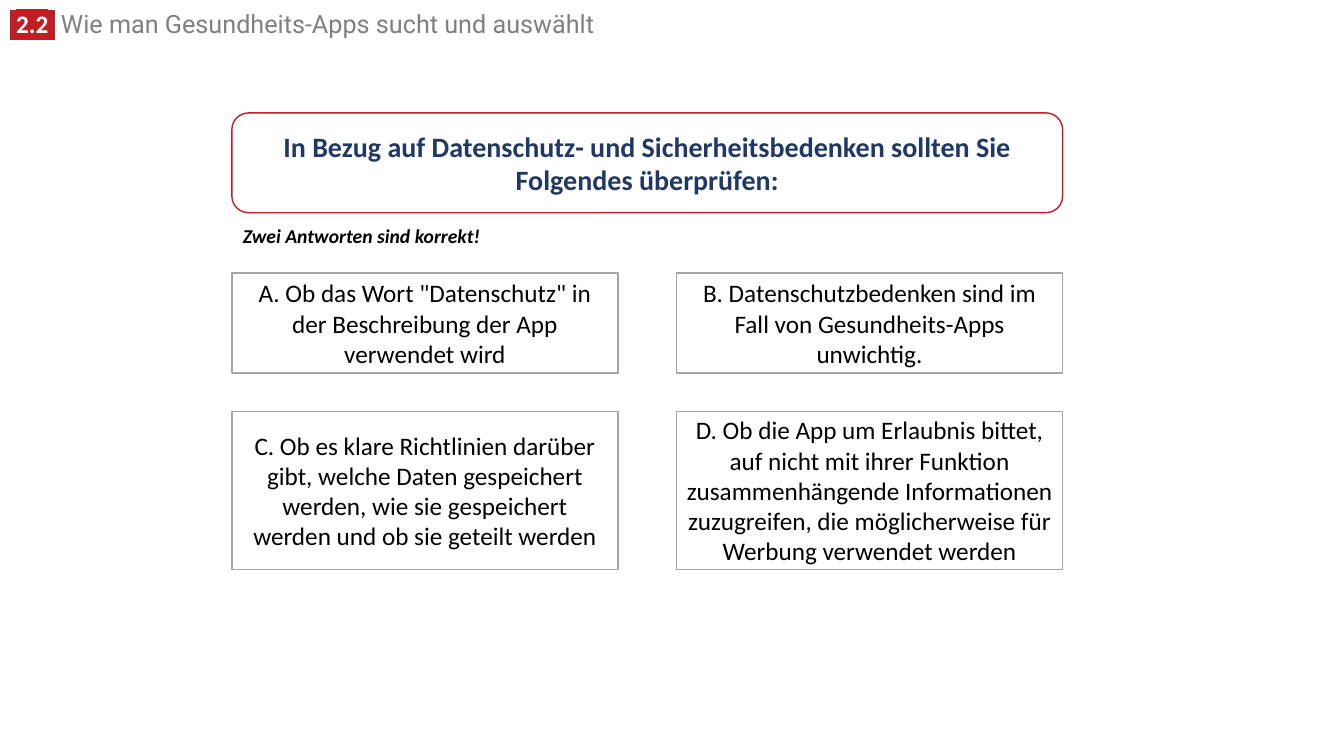
from lxml import etree
from pptx import Presentation
from pptx.dml.color import RGBColor
from pptx.enum.shapes import MSO_SHAPE as Shape
from pptx.enum.text import MSO_ANCHOR as Anchor, PP_ALIGN as Align
from pptx.oxml.ns import qn
from pptx.util import Inches, Pt

COLORS = {
    "red": "C01E24",
    "navy": "203864",
    "grey": "808080",
    "border": "A5A5A5",
    "white": "FFFFFF",
    "black": "000000",
}


def style_font(font, size, color, name="Calibri", bold=False):
    font.size = Pt(size)
    font.name = name
    font.bold = bold
    font.color.rgb = RGBColor.from_string(COLORS[color])


def add_card(kind, left, top, width, height, text, border):
    card = page.shapes.add_shape(
        kind, Inches(left), Inches(top), Inches(width), Inches(height))
    card.shadow.inherit = False
    card.fill.solid()
    card.fill.fore_color.rgb = RGBColor.from_string(COLORS["white"])
    card.line.color.rgb = RGBColor.from_string(COLORS[border])
    card.line.width = Pt(1)
    frame = card.text_frame
    frame.word_wrap = True
    frame.vertical_anchor = Anchor.MIDDLE
    frame.text = text
    para = frame.paragraphs[0]
    para.alignment = Align.CENTER
    return para.runs[0].font


deck = Presentation()
deck.slide_width, deck.slide_height = Inches(13.33), Inches(7.5)
page = deck.slides.add_slide(deck.slide_layouts[6])

# Section heading with highlighted number
heading = page.shapes.add_textbox(Inches(0), Inches(0.09), Inches(9.52), Inches(0.35))
heading.text_frame.word_wrap = True
para = heading.text_frame.paragraphs[0]
para.line_spacing = 0.8
for text, name in [(" ", "Roboto"), ("2.2", "Calibri"), (" ", "Roboto")]:
    span = para.add_run()
    span.text = text
    style_font(span.font, 18, "white", name, bold=True)
    highlight = etree.Element(qn("a:highlight"))
    etree.SubElement(highlight, qn("a:srgbClr"), val=COLORS["red"])
    span.font._element.find(qn("a:solidFill")).addnext(highlight)
span = para.add_run()
span.text = " Wie man Gesundheits-Apps sucht und auswählt"
style_font(span.font, 18, "grey", "Roboto")

# Question
question_font = add_card(
    Shape.ROUNDED_RECTANGLE, 2.3, 1.12, 8.24, 0.99,
    "In Bezug auf Datenschutz- und Sicherheitsbedenken sollten Sie "
    "Folgendes überprüfen:", "red")
style_font(question_font, 20, "navy", bold=True)

# Hint
hint = page.shapes.add_textbox(Inches(2.31), Inches(2.17), Inches(2.57), Inches(0.34))
hint.text_frame.word_wrap = False
hint.text_frame.text = "Zwei Antworten sind korrekt!"
hint_font = hint.text_frame.paragraphs[0].runs[0].font
style_font(hint_font, 14, "black", bold=True)
hint_font.italic = True

# Answers in two columns
answer_columns = [2.3, 6.71]
answer_rows = [
    (2.71, 0.99, [
        'A. Ob das Wort "Datenschutz" in der Beschreibung der App verwendet wird',
        "B. Datenschutzbedenken sind im Fall von Gesundheits-Apps unwichtig.",
    ]),
    (4.08, 1.57, [
        "C. Ob es klare Richtlinien darüber gibt, welche Daten gespeichert werden, "
        "wie sie gespeichert werden und ob sie geteilt werden",
        "D. Ob die App um Erlaubnis bittet, auf nicht mit ihrer Funktion "
        "zusammenhängende Informationen zuzugreifen, die möglicherweise für "
        "Werbung verwendet werden",
    ]),
]
for top, height, answers in answer_rows:
    for left, answer in zip(answer_columns, answers):
        answer_font = add_card(
            Shape.RECTANGLE, left, top, 3.83, height, answer, "border")
        style_font(answer_font, 18, "black")

deck.save("out.pptx")
